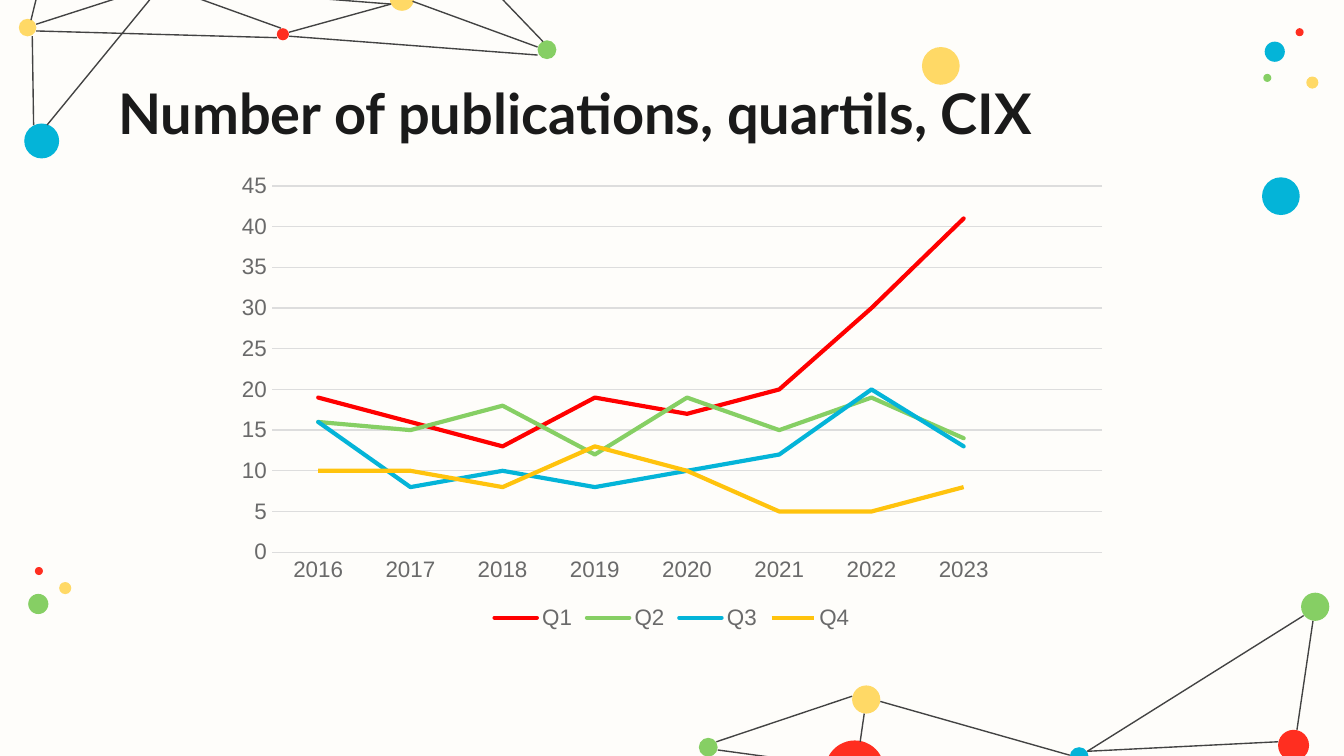
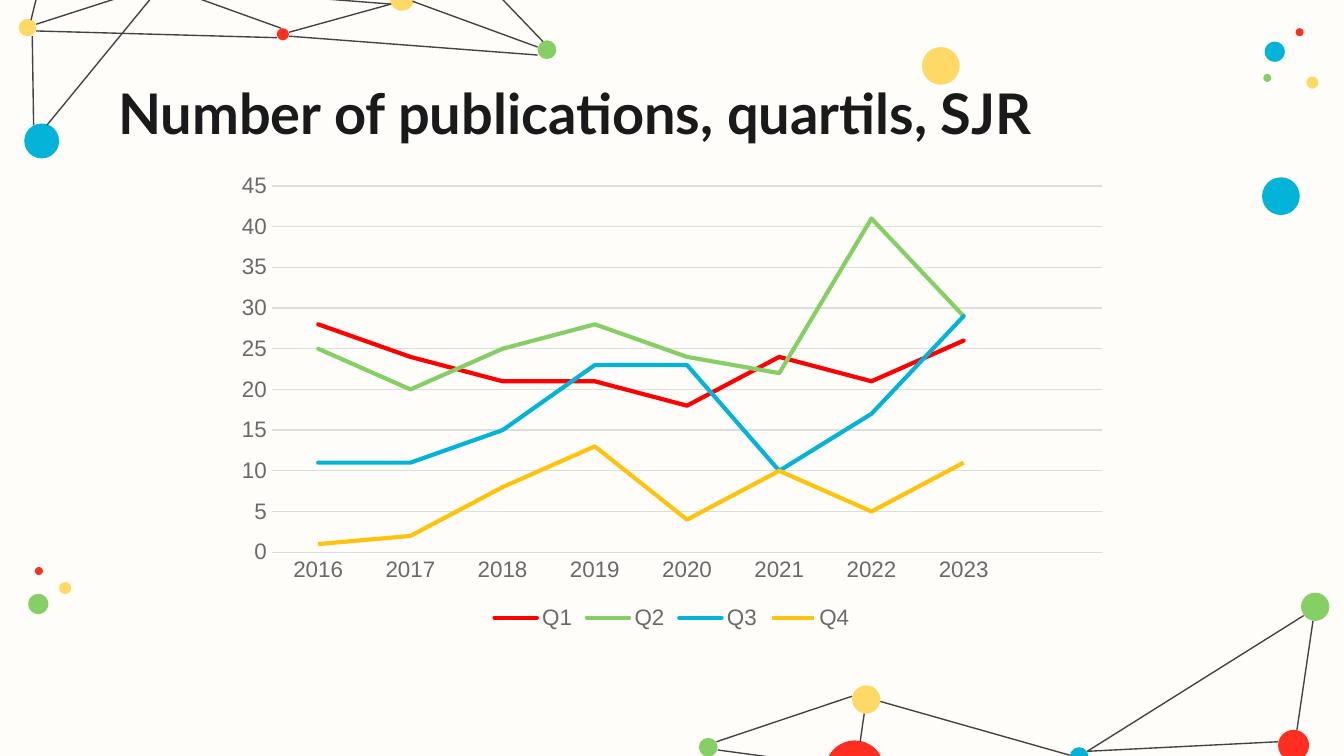
from lxml.etree import SubElement
from pptx import Presentation
from pptx.chart.data import CategoryChartData
from pptx.dml.color import RGBColor
from pptx.enum.chart import XL_CHART_TYPE, XL_LEGEND_POSITION, XL_MARKER_STYLE, XL_TICK_MARK
from pptx.enum.shapes import MSO_CONNECTOR, MSO_SHAPE
from pptx.enum.text import MSO_ANCHOR
from pptx.oxml.ns import qn
from pptx.util import Pt

BACKGROUND = RGBColor(0xFE, 0xFD, 0xFA)
INK = RGBColor(0x1A, 0x1A, 0x1A)
LABEL_GREY = RGBColor(0x6A, 0x6A, 0x6A)
GRID_GREY = RGBColor(0xDD, 0xDD, 0xDD)
LINK_GREY = RGBColor(0x43, 0x43, 0x43)
YELLOW = RGBColor(0xFF, 0xD9, 0x66)
GREEN = RGBColor(0x86, 0xCF, 0x64)
RED = RGBColor(0xFF, 0x2E, 0x20)
BLUE = RGBColor(0x04, 0xB4, 0xD8)
PURE_RED = RGBColor(0xFF, 0x00, 0x00)
AMBER = RGBColor(0xFF, 0xC3, 0x0D)

# Dots: left, top, diameter, colour
NETWORK_DOTS = [
    # left and right clusters
    (31.7, 311.8, 6.5, YELLOW), (15.1, 318.2, 10.8, GREEN), (18.7, 303.8, 4.3, RED),
    (699.8, 41, 6.5, YELLOW), (677.5, 22.3, 10.8, BLUE), (694.1, 15.1, 4.3, RED),
    (676.8, 39.6, 4.3, GREEN),
    # top network
    (208.8, -7.2, 13, YELLOW), (10.1, 10.1, 9.4, YELLOW), (148.3, 15.1, 6.5, RED),
    (288, 21.6, 10.1, GREEN), (13, 66.2, 18.7, BLUE),
    # bottom network
    (697, 317.5, 15.1, GREEN), (442.1, 396.7, 31.7, RED), (684.7, 391, 16.6, RED),
    (573.1, 400.3, 10.1, BLUE), (374.4, 395.3, 10.1, GREEN), (456.5, 367.2, 15.1, YELLOW),
]
ACCENT_DOTS = [(493.9, 25.2, 20.2, YELLOW), (676.1, 95, 20.2, BLUE)]

# Links: start x, start y, end x, end y
NETWORK_LINKS = [
    # top network
    (19.4, 13, 82.1, -7.2), (150.5, 15.1, 88.6, -7.2), (62.6, -175.7, 16.6, 10.8),
    (19.4, 16.6, 148.3, 20.2), (154.8, 17.3, 209.5, 2.2), (88.6, -7.2, 209.5, 2.2),
    (288, 25.2, 221, 0.7), (154.8, 19.4, 288, 29.5), (290.9, 22.3, 224.6, -46.8),
    (84.2, -5, 25.2, 67), (17.3, 19.4, 18, 67),
    # bottom network
    (703.4, 332.6, 694.8, 391), (698.4, 329.8, 582.5, 402.5), (684.7, 397.4, 582.5, 402.5),
    (384.5, 401.8, 442.8, 409.7), (383.8, 397.4, 456.5, 373), (471.6, 375.8, 573.1, 404.6),
    (463, 382.3, 460.8, 397.4),
]

# The empty last category leaves room on the right of the plot.
CATEGORIES = [str(year) for year in range(2016, 2024)] + [""]
QUARTILE_COLOURS = {"Q1": PURE_RED, "Q2": GREEN, "Q3": BLUE, "Q4": AMBER}
PUBLICATIONS = {
    "CIX": [
        (19, 16, 13, 19, 17, 20, 30, 41),
        (16, 15, 18, 12, 19, 15, 19, 14),
        (16, 8, 10, 8, 10, 12, 20, 13),
        (10, 10, 8, 13, 10, 5, 5, 8),
    ],
    "SJR": [
        (28, 24, 21, 21, 18, 24, 21, 26),
        (25, 20, 25, 28, 24, 22, 41, 29),
        (11, 11, 15, 23, 23, 10, 17, 29),
        (1, 2, 8, 13, 4, 10, 5, 11),
    ],
}


def add_dots(slide, dots):
    for left, top, diameter, colour in dots:
        dot = slide.shapes.add_shape(
            MSO_SHAPE.OVAL, Pt(left), Pt(top), Pt(diameter), Pt(diameter))
        dot.shadow.inherit = False
        dot.fill.solid()
        dot.fill.fore_color.rgb = colour
        dot.line.fill.background()


def style_font(font, size, colour, name="Arial"):
    font.name = name
    font.size = Pt(size)
    font.color.rgb = colour


presentation = Presentation()
presentation.slide_width = Pt(720)
presentation.slide_height = Pt(405)

for database, quartile_values in PUBLICATIONS.items():
    slide = presentation.slides.add_slide(presentation.slide_layouts[6])
    slide.background.fill.solid()
    slide.background.fill.fore_color.rgb = BACKGROUND

    # Network decoration
    add_dots(slide, NETWORK_DOTS)
    for link_ends in NETWORK_LINKS:
        link = slide.shapes.add_connector(
            MSO_CONNECTOR.STRAIGHT, *[Pt(value) for value in link_ends])
        link.line.color.rgb = LINK_GREY
        link.line.width = Pt(0.75)
        SubElement(link._element.spPr, qn("a:effectLst"))

    # Title
    title = slide.shapes.add_textbox(Pt(56.2), Pt(35), Pt(607.7), Pt(45.4))
    text_frame = title.text_frame
    text_frame.word_wrap = True
    text_frame.vertical_anchor = MSO_ANCHOR.TOP
    text_frame.margin_left = text_frame.margin_right = Pt(7.2)
    text_frame.margin_top = text_frame.margin_bottom = Pt(7.2)
    paragraph = text_frame.paragraphs[0]
    paragraph.text = f"Number of publications, quartils, {database}"
    style_font(paragraph.font, 30, INK, "Lato")
    paragraph.font.bold = True

    add_dots(slide, ACCENT_DOTS)

    # Line chart
    chart_data = CategoryChartData()
    chart_data.categories = CATEGORIES
    for quartile, values in zip(QUARTILE_COLOURS, quartile_values):
        chart_data.add_series(quartile, (*values, None))
    chart = slide.shapes.add_chart(
        XL_CHART_TYPE.LINE, Pt(120), Pt(88.2), Pt(480), Pt(252), chart_data).chart
    style_font(chart.font, 10, INK)
    chart.has_title = False
    chart.has_legend = True
    chart.legend.position = XL_LEGEND_POSITION.BOTTOM
    chart.legend.include_in_layout = False
    style_font(chart.legend.font, 12, LABEL_GREY)

    for axis in (chart.category_axis, chart.value_axis):
        axis.major_tick_mark = axis.minor_tick_mark = XL_TICK_MARK.NONE
        style_font(axis.tick_labels.font, 12, LABEL_GREY)
    value_axis = chart.value_axis
    value_axis.minimum_scale, value_axis.maximum_scale = 0, 45
    value_axis.major_unit = 5
    value_axis.format.line.fill.background()
    for line in (chart.category_axis.format.line, value_axis.major_gridlines.format.line):
        line.color.rgb = GRID_GREY
        line.width = Pt(0.75)

    chart.plots[0].vary_by_categories = False
    for series in chart.plots[0].series:
        series.smooth = False
        series.marker.style = XL_MARKER_STYLE.NONE
        series.format.line.color.rgb = QUARTILE_COLOURS[series.name]
        series.format.line.width = Pt(2.25)
        if series.name != "Q4":
            series._element.spPr.find(qn("a:ln")).set("cap", "rnd")

presentation.save("out.pptx")
